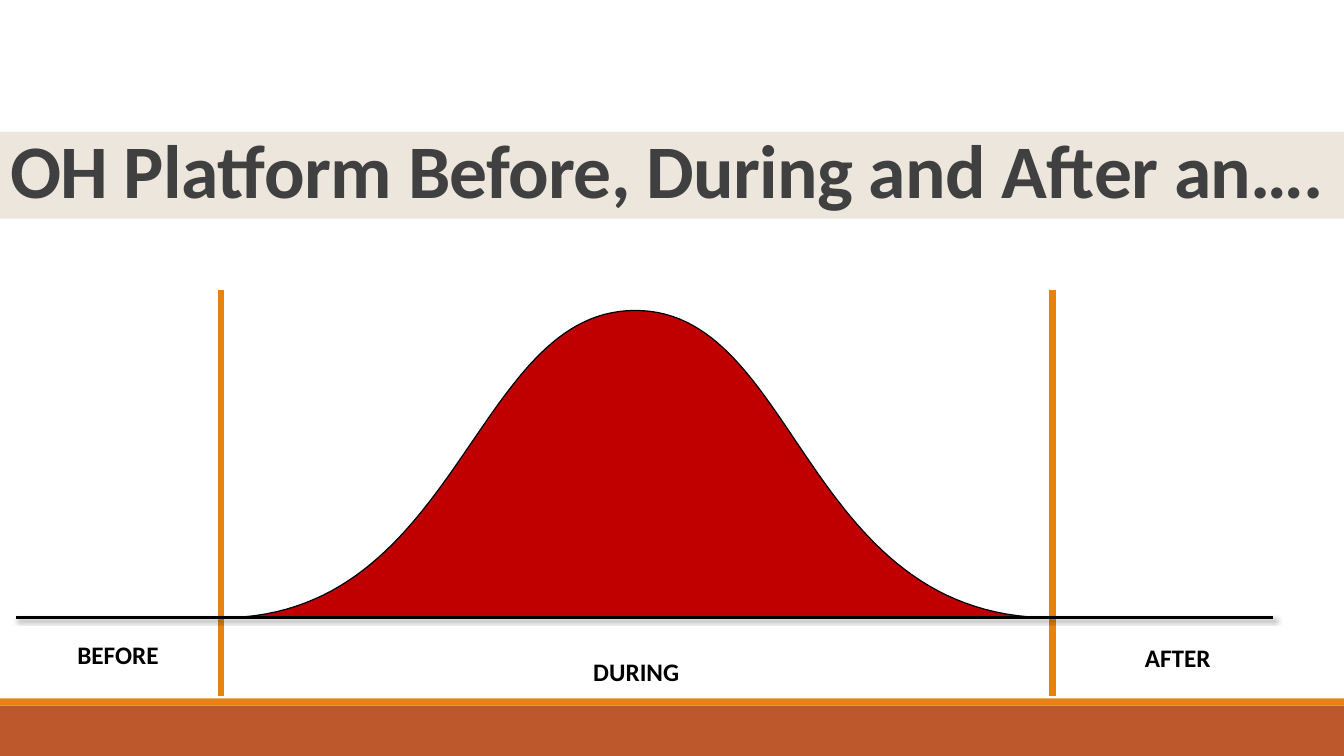
from dataclasses import dataclass

from lxml.etree import SubElement
from pptx import Presentation
from pptx.dml.color import RGBColor
from pptx.enum.shapes import MSO_CONNECTOR, MSO_SHAPE
from pptx.enum.text import MSO_ANCHOR, MSO_AUTO_SIZE, PP_ALIGN
from pptx.oxml.ns import qn
from pptx.util import Inches, Pt

SLIDE_WIDTH, SLIDE_HEIGHT = 13.33, 7.5
ORANGE, BLACK = "E48312", "000000"
BASELINE, PEAK = 6.13, 3.08
DURING_START, DURING_END = 2.19, 10.44
CURVE_STEPS = 60

Point = tuple[float, float]


@dataclass
class Band:
    top: float
    height: float
    color: str


@dataclass
class Rule:
    start: Point
    end: Point
    color: str
    width: float
    shadow: bool = False


@dataclass
class Label:
    text: str
    left: float
    top: float


BANDS = [
    Band(7, 0.5, "BD582C"),
    Band(6.93, 0.07, ORANGE),
    Band(1.31, 0.86, "ECE6DD"),
]
RULES = [
    Rule((x, 2.88), (x, 6.9), ORANGE, 4.5) for x in (DURING_START, DURING_END)
] + [Rule((0.16, BASELINE), (12.63, BASELINE), BLACK, 2, shadow=True)]
LABELS = [
    Label("BEFORE", 0.31, 6.29),
    Label("AFTER", 10.82, 6.32),
    Label("DURING", 5.45, 6.46),
]
CURVE = [
    ((DURING_START, BASELINE), (4.56, BASELINE), (4.69, PEAK), (6.3, PEAK)),
    ((6.3, PEAK), (7.91, PEAK), (7.97, BASELINE), (DURING_END, BASELINE)),
]


def rgb(color: str) -> RGBColor:
    return RGBColor.from_string(color)


def write(frame, text: str, *, size: float, color: str, align=PP_ALIGN.LEFT,
          line_spacing: float = 1.0, tracking: int = 0) -> None:
    frame.word_wrap = True
    para = frame.paragraphs[0]
    para.alignment = align
    para.line_spacing = line_spacing
    span = para.add_run()
    span.text = text
    span.font.name = "Calibri"
    span.font.size = Pt(size)
    span.font.bold = True
    span.font.color.rgb = rgb(color)
    if tracking:
        span.font._element.set("spc", str(tracking))


def draw_band(page, band: Band):
    box = page.shapes.add_shape(MSO_SHAPE.RECTANGLE, 0, Inches(band.top),
                                Inches(SLIDE_WIDTH), Inches(band.height))
    box.shadow.inherit = False
    box.fill.solid()
    box.fill.fore_color.rgb = rgb(band.color)
    box.line.fill.background()
    return box


def draw_title(page, text: str, band) -> None:
    title = page.shapes.title
    title.left, title.top = Inches(0), Inches(1.34)
    title.width, title.height = Inches(SLIDE_WIDTH), Inches(0.8)
    frame = title.text_frame
    frame.auto_size = MSO_AUTO_SIZE.NONE
    frame.vertical_anchor = MSO_ANCHOR.MIDDLE
    write(frame, text, size=54, color="404040", line_spacing=0.85, tracking=-50)
    band.element.addnext(title.element)


def bezier_point(controls: tuple[Point, ...], t: float) -> Point:
    weights = ((1 - t) ** 3, 3 * t * (1 - t) ** 2, 3 * t ** 2 * (1 - t), t ** 3)
    x, y = (sum(w * c[axis] for w, c in zip(weights, controls)) for axis in (0, 1))
    return Inches(x), Inches(y)


def draw_curve(page) -> None:
    points = [bezier_point(controls, step / CURVE_STEPS)
              for controls in CURVE for step in range(1, CURVE_STEPS + 1)]
    builder = page.shapes.build_freeform(Inches(DURING_START), Inches(BASELINE))
    builder.add_line_segments(points, close=False)
    curve = builder.convert_to_shape()
    curve.shadow.inherit = False
    curve.fill.solid()
    curve.fill.fore_color.rgb = rgb("C00000")
    curve.line.color.rgb = rgb(BLACK)
    curve.line.width = Pt(0.88)


def draw_rule(page, rule: Rule) -> None:
    ends = [Inches(value) for value in (*rule.start, *rule.end)]
    line = page.shapes.add_connector(MSO_CONNECTOR.STRAIGHT, *ends)
    line.line.color.rgb = rgb(rule.color)
    line.line.width = Pt(rule.width)
    effects = SubElement(line.element.spPr, qn("a:effectLst"))
    if rule.shadow:
        shadow = SubElement(effects, qn("a:outerShdw"), blurRad=str(Pt(3)),
                            dist=str(Pt(2)), dir=str(45 * 60000), rotWithShape="0")
        tint = SubElement(shadow, qn("a:srgbClr"), val=BLACK)
        SubElement(tint, qn("a:alpha"), val="60000")


def draw_label(page, label: Label) -> None:
    box = page.shapes.add_textbox(Inches(label.left), Inches(label.top),
                                  Inches(1.72), Inches(0.4))
    box.text_frame.auto_size = MSO_AUTO_SIZE.SHAPE_TO_FIT_TEXT
    write(box.text_frame, label.text, size=18, color=BLACK, align=PP_ALIGN.CENTER)


def main() -> None:
    deck = Presentation()
    deck.slide_width, deck.slide_height = Inches(SLIDE_WIDTH), Inches(SLIDE_HEIGHT)
    page = deck.slides.add_slide(deck.slide_layouts.get_by_name("Title Only"))
    bands = [draw_band(page, band) for band in BANDS]
    draw_title(page, "OH Platform Before, During and After an….", bands[-1])
    draw_curve(page)
    for rule in RULES:
        draw_rule(page, rule)
    for label in LABELS:
        draw_label(page, label)
    deck.save("out.pptx")


if __name__ == "__main__":
    main()
